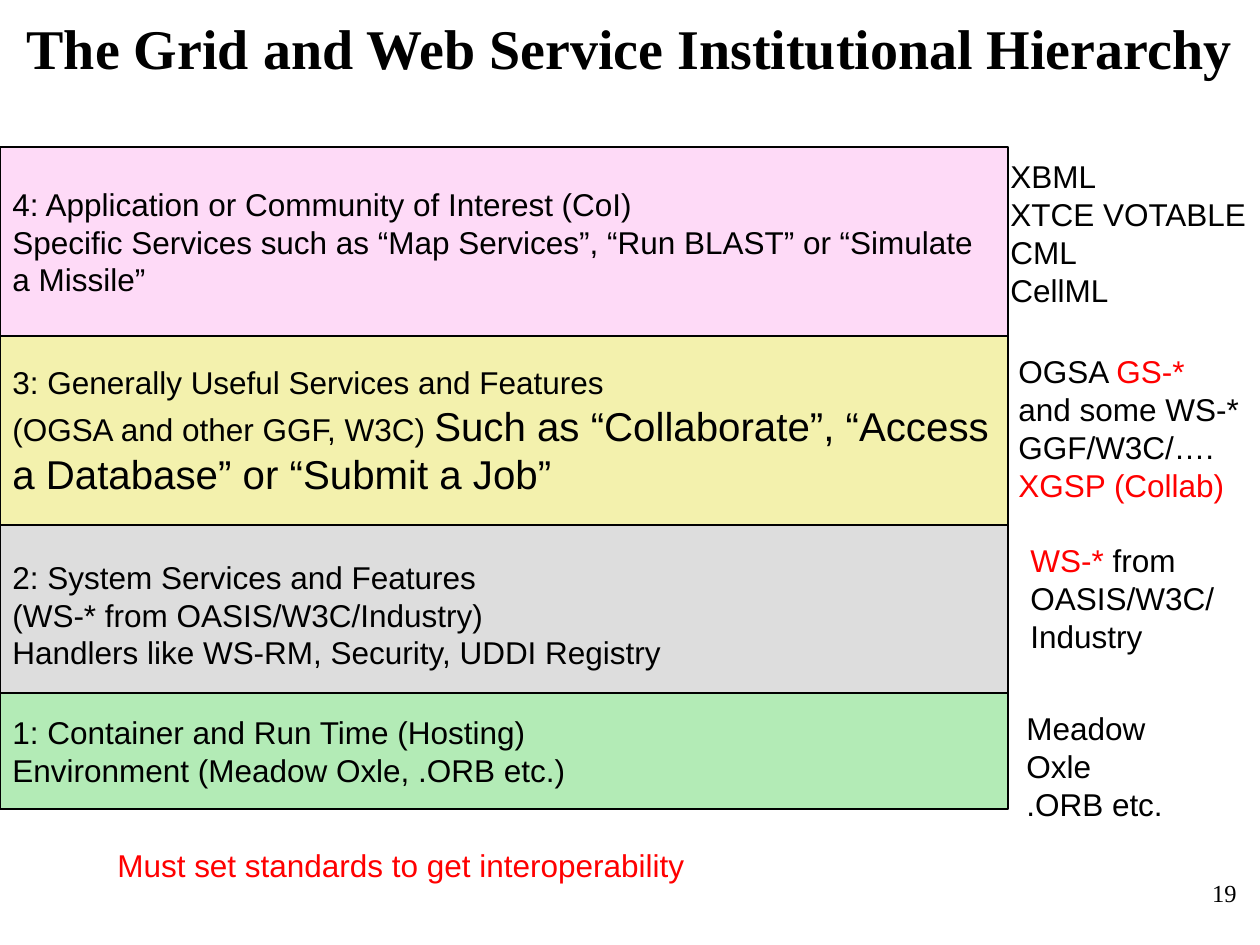
import pptx
import pptx.util
from pptx.dml.color import RGBColor
from pptx.enum.shapes import MSO_SHAPE
from pptx.enum.text import MSO_ANCHOR, PP_ALIGN

SCALE = 914400 / 126
WIDE, HIGH = 1260, 945

BLACK = RGBColor(0, 0, 0)
RED = RGBColor(0xFF, 0, 0)
PINK = RGBColor(0xFE, 0xDA, 0xF7)
YELLOW = RGBColor(0xF3, 0xF1, 0xAD)
GREY = RGBColor(0xDD, 0xDD, 0xDD)
GREEN = RGBColor(0xB3, 0xEB, 0xB6)
SERIF = "Times New Roman"


def emu(px):
    return pptx.util.Emu(round(px * SCALE))


def write(shape, paras, size=18, font="Arial", color=BLACK, bold=False,
          align=PP_ALIGN.LEFT, anchor=MSO_ANCHOR.TOP):
    """Fill shape with paragraphs, each a list of (text, format changes).

    A newline in a text is a line break inside its paragraph.
    """
    frame = shape.text_frame
    frame.word_wrap = True
    frame.vertical_anchor = anchor
    for n, runs in enumerate(paras):
        para = frame.add_paragraph() if n else frame.paragraphs[0]
        para.alignment = align
        for text, diff in runs:
            for k, line in enumerate(text.split("\n")):
                if k:
                    para.add_line_break()
                if not line:
                    continue
                run = para.add_run()
                run.text = line
                run.font.name = font
                run.font.bold = bold
                run.font.size = pptx.util.Pt(diff.get("size", size))
                run.font.color.rgb = diff.get("color", color)


def plain(*texts):
    return [[(text, {})] for text in texts]


def label(slide, box, paras, **form):
    shape = slide.shapes.add_textbox(*map(emu, box))
    write(shape, paras, **form)


def layer(slide, box, fill, paras):
    shape = slide.shapes.add_shape(MSO_SHAPE.RECTANGLE, *map(emu, box))
    shape.shadow.inherit = False
    shape.fill.solid()
    shape.fill.fore_color.rgb = fill
    shape.line.color.rgb = BLACK
    shape.line.width = pptx.util.Pt(0.75)
    write(shape, paras, anchor=MSO_ANCHOR.MIDDLE)


def stack(slide, left, top, width):
    """Draw the four layers; the lowest one overlaps the one above it."""
    rows = [
        (378, 179, GREY, plain(
            "2: System Services and Features",
            "(WS-* from OASIS/W3C/Industry)",
            "Handlers like WS-RM, Security, UDDI Registry")),
        (189, 189, YELLOW, [
            [("3: Generally Useful Services and Features", {})],
            [("(OGSA and other GGF, W3C) ", {}),
             ("Such as “Collaborate”, “Access a Database” or “Submit a Job”",
              {"size": 23})]]),
        (0, 189, PINK, plain(
            "4: Application or Community of Interest (CoI)\n"
            "Specific Services such as “Map Services”, “Run BLAST” "
            "or “Simulate a Missile”")),
        (546, 116, GREEN, plain(
            "1: Container and Run Time (Hosting)",
            "Environment (Meadow Oxle, .ORB etc.)")),
    ]
    for down, high, fill, paras in rows:
        layer(slide, (left, top + down, width, high), fill, paras)


def notes(slide, left, top):
    """Name the standards beside each layer."""
    red = {"color": RED}
    items = [
        (0, 4, 273, 164, plain("XBML\nXTCE VOTABLE", "CML", "CellML")),
        (8, 199, 254, 164, [
            [("OGSA ", {}), ("GS-*\n", red), ("and some WS-*", {})],
            [("GGF/W3C/….\n", {}), ("XGSP (Collab)", red)]]),
        (20, 388, 210, 126, [
            [("WS-*", red), (" from\nOASIS/W3C/\nIndustry", {})]]),
        (16, 556, 214, 88, plain("Meadow Oxle\n.ORB etc.")),
    ]
    for right, down, wide, high, paras in items:
        label(slide, (left + right, top + down, wide, high), paras)


def main():
    deck = pptx.Presentation()
    deck.slide_width, deck.slide_height = emu(WIDE), emu(HIGH)
    slide = deck.slides.add_slide(deck.slide_layouts[6])
    label(slide, (987, 872, 262, 63), plain("19"), size=14, font=SERIF,
          align=PP_ALIGN.RIGHT)
    label(slide, (0, 0, WIDE, 95),
          plain("The Grid and Web Service Institutional Hierarchy"),
          size=32, font=SERIF, bold=True, align=PP_ALIGN.CENTER,
          anchor=MSO_ANCHOR.MIDDLE)
    stack(slide, 0, 147, 1008)
    notes(slide, 998, 147)
    label(slide, (105, 840, 769, 63),
          plain("Must set standards to get interoperability"), color=RED)
    deck.save("out.pptx")


if __name__ == "__main__":
    main()
